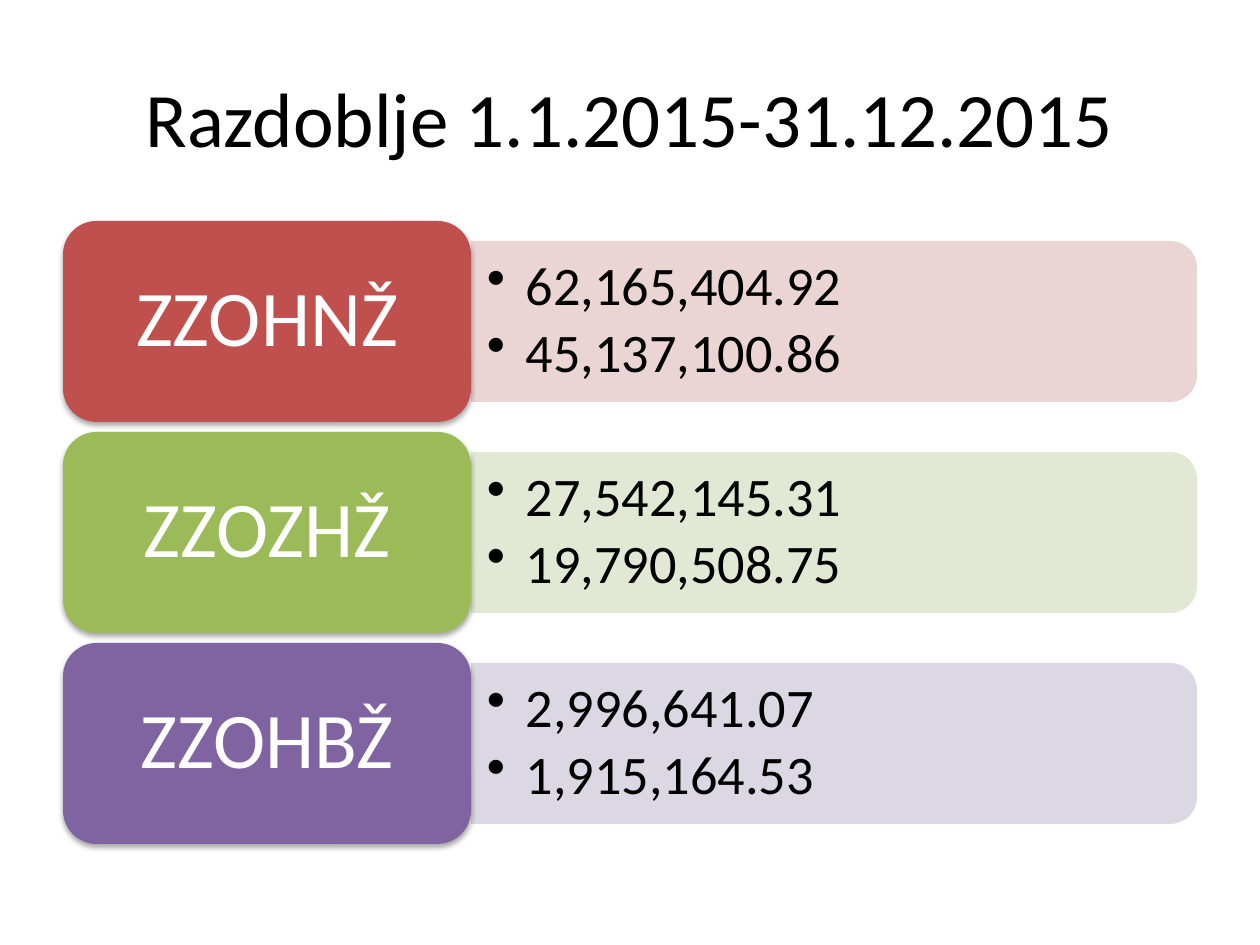
from lxml import etree
from pptx import Presentation, util as u
from pptx.dml.color import RGBColor
from pptx.enum import shapes, text
from pptx.oxml.ns import qn

TITLE = "Razdoblje 1.1.2015-31.12.2015"
ROWS = [
    ("ZZOHNŽ", ["62,165,404.92", "45,137,100.86"], "red"),
    ("ZZOZHŽ", ["27,542,145.31", "19,790,508.75"], "green"),
    ("ZZOHBŽ", ["2,996,641.07", "1,915,164.53"], "purple"),
]
COLORS = {
    "red": "C0504D", "red_tint": "E8D0D0",
    "green": "9BBB59", "green_tint": "DEE7D1",
    "purple": "8064A2", "purple_tint": "D8D3E0",
    "black": "000000", "white": "FFFFFF",
}
FONT = "Calibri"
EMU_PER_PX = 914400 / 126
TITLE_BOX = (63, 38, 1134, 158)
LEFT, TOP, PITCH = 63, 221, 211
CARD_WIDTH, CARD_HEIGHT = 408, 201
BAR_WIDTH, BAR_HEIGHT = 726, 161
VALUES_WIDTH, VALUES_HEIGHT = 718, 145
BULLET_INDENT = 39


def px(length):
    return u.Emu(round(length * EMU_PER_PX))


def add_xml(parent, tag, **attributes):
    return etree.SubElement(parent, qn(tag), attributes)


def add_filled_shape(slide, kind, box, color):
    shape = slide.shapes.add_shape(kind, *map(px, box))
    shape.fill.solid()
    shape.fill.fore_color.rgb = RGBColor.from_string(COLORS[color])
    shape.line.fill.background()
    shape.shadow.inherit = False
    return shape


def write_text(shape, lines, size, color, align, margins=(0, 0), spacing=None, after=0):
    frame = shape.text_frame
    frame.word_wrap = True
    frame.vertical_anchor = text.MSO_ANCHOR.MIDDLE
    frame.margin_left = frame.margin_right = px(margins[0])
    frame.margin_top = frame.margin_bottom = px(margins[1])
    frame.text = "\n".join(lines)
    for paragraph in frame.paragraphs:
        paragraph.alignment = align
        paragraph.line_spacing = spacing
        paragraph.space_after = u.Pt(after)
        font = paragraph.runs[0].font
        font.name, font.size = FONT, u.Pt(size)
        font.color.rgb = RGBColor.from_string(COLORS[color])
    return frame.paragraphs


def add_bar(slide, top, color):
    """Add a bar rounded on its right: a tall shape turned about its centre."""
    shift = (BAR_WIDTH - BAR_HEIGHT) / 2
    box = (LEFT + CARD_WIDTH + shift, top - shift, BAR_HEIGHT, BAR_WIDTH)
    bar = add_filled_shape(slide, shapes.MSO_SHAPE.ROUND_2_SAME_RECTANGLE, box, color)
    bar.rotation = 90
    fill_color = bar.fill._xPr.find(qn("a:solidFill"))[0]
    add_xml(fill_color, "a:alpha", val="90000")


def add_values(slide, top, values):
    box = (LEFT + CARD_WIDTH, top, VALUES_WIDTH, VALUES_HEIGHT)
    values_box = slide.shapes.add_textbox(*map(px, box))
    for paragraph in write_text(values_box, values, 31, "black", text.PP_ALIGN.LEFT,
                                (16, 8), 0.9, 4.5):
        properties = paragraph._p.get_or_add_pPr()
        properties.set("marL", str(px(BULLET_INDENT)))
        properties.set("indent", str(-px(BULLET_INDENT)))
        add_xml(properties, "a:buChar", char="•")


def add_card(slide, top, label, color):
    box = (LEFT, top, CARD_WIDTH, CARD_HEIGHT)
    card = add_filled_shape(slide, shapes.MSO_SHAPE.ROUNDED_RECTANGLE, box, color)
    effects = card._element.spPr.find(qn("a:effectLst"))
    shadow = add_xml(effects, "a:outerShdw", blurRad=str(u.Pt(3.1)), dist=str(u.Pt(1.8)),
                     dir="5400000", rotWithShape="0")
    shadow_color = add_xml(shadow, "a:srgbClr", val=COLORS["black"])
    add_xml(shadow_color, "a:alpha", val="35000")
    write_text(card, [label], 45, "white", text.PP_ALIGN.CENTER, (24, 11), 0.9)


def main():
    presentation = Presentation()
    presentation.slide_width, presentation.slide_height = px(1260), px(945)
    slide = presentation.slides.add_slide(presentation.slide_layouts[6])

    title = slide.shapes.add_textbox(*map(px, TITLE_BOX))
    write_text(title, [TITLE], 44, "black", text.PP_ALIGN.CENTER, (13, 6))

    for index, (label, values, color) in enumerate(ROWS):
        top = TOP + index * PITCH
        add_bar(slide, top + (CARD_HEIGHT - BAR_HEIGHT) / 2, color + "_tint")
        add_values(slide, top + (CARD_HEIGHT - VALUES_HEIGHT) / 2, values)
        add_card(slide, top, label, color)

    presentation.save("out.pptx")


if __name__ == "__main__":
    main()
